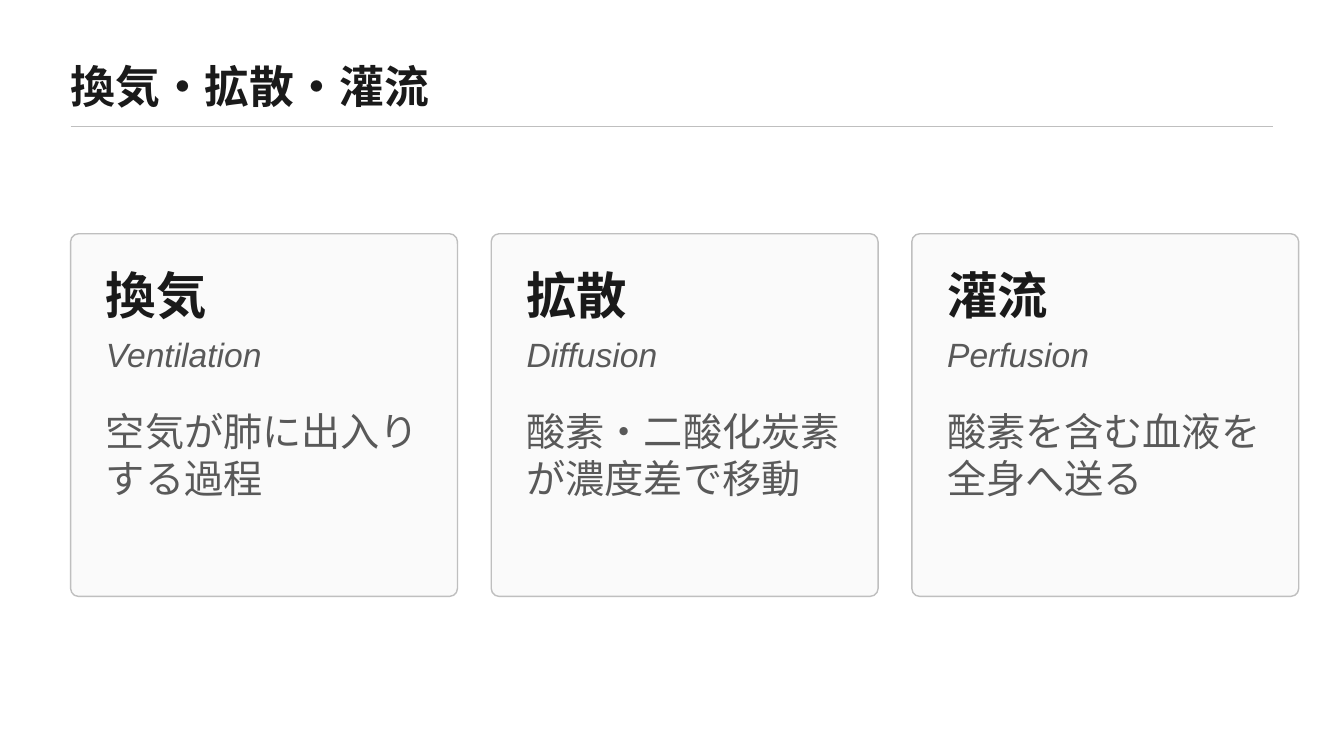
from lxml.etree import SubElement
from pptx import Presentation
from pptx.dml.color import RGBColor
from pptx.enum.shapes import MSO_CONNECTOR as Link, MSO_SHAPE as Kind
from pptx.enum.text import MSO_ANCHOR as Anchor
from pptx.oxml.ns import qn
from pptx.util import Cm, Pt

INK, GRAY, RULE, PALE = "1A1A1A", "595959", "BFBFBF", "FAFAFA"
LEFT, GAP = 1.78, 0.85
CARD_TOP, CARD_W, CARD_H = 5.89, 9.75, 9.14
CARDS = [
    ("換気", "Ventilation", "空気が肺に出入りする過程"),
    ("拡散", "Diffusion", "酸素・二酸化炭素が濃度差で移動"),
    ("灌流", "Perfusion", "酸素を含む血液を全身へ送る"),
]


def color(code):
    return RGBColor.from_string(code)


def write(slide, text, x, y, w, h, size, ink=GRAY, bold=False, italic=False,
          anchor=Anchor.MIDDLE, inset=True):
    frame = slide.shapes.add_textbox(Cm(x), Cm(y), Cm(w), Cm(h)).text_frame
    frame.word_wrap = True
    frame.vertical_anchor = anchor
    if not inset:
        frame.margin_left = frame.margin_right = 0
        frame.margin_top = frame.margin_bottom = 0
    run = frame.paragraphs[0].add_run()
    run.text = text
    font = run.font
    font.name, font.size = "Arial", Pt(size)
    font.bold, font.italic = bold, italic
    font.color.rgb = color(ink)


def stroke(line):
    line.color.rgb = color(RULE)
    line.width = Pt(1)


def header(slide, title, x, y, w, h):
    """Place the title with a thin rule along the bottom of its box."""
    write(slide, title, x, y, w, h, 32, ink=INK, bold=True, inset=False)
    base = Cm(y + h)
    rule = slide.shapes.add_connector(
        Link.STRAIGHT, Cm(x), base, Cm(x + w), base)
    stroke(rule.line)
    SubElement(rule._element.spPr, qn("a:effectLst"))


def card(slide, term, english, note, x, y, w, h):
    panel = slide.shapes.add_shape(
        Kind.ROUNDED_RECTANGLE, Cm(x), Cm(y), Cm(w), Cm(h))
    panel.adjustments[0] = 0.022
    panel.shadow.inherit = False
    panel.fill.solid()
    panel.fill.fore_color.rgb = color(PALE)
    stroke(panel.line)
    left = x + 0.64
    write(slide, term, left, y + 0.76, w - 1.37, 1.52, 36, ink=INK, bold=True)
    write(slide, english, left, y + 2.51, w - 1.37, 1.02, 24, italic=True)
    write(slide, note, left, y + 4.24, w - 0.91, 4.57, 28, anchor=Anchor.TOP)


def main():
    deck = Presentation()
    deck.slide_width, deck.slide_height = Cm(33.87), Cm(19.05)
    slide = deck.slides.add_slide(deck.slide_layouts[6])
    header(slide, "換気・拡散・灌流", LEFT, 1.14, 30.3, 2.04)
    for i, words in enumerate(CARDS):
        card(slide, *words, LEFT + i * (CARD_W + GAP), CARD_TOP, CARD_W, CARD_H)
    deck.save("out.pptx")


if __name__ == "__main__":
    main()
